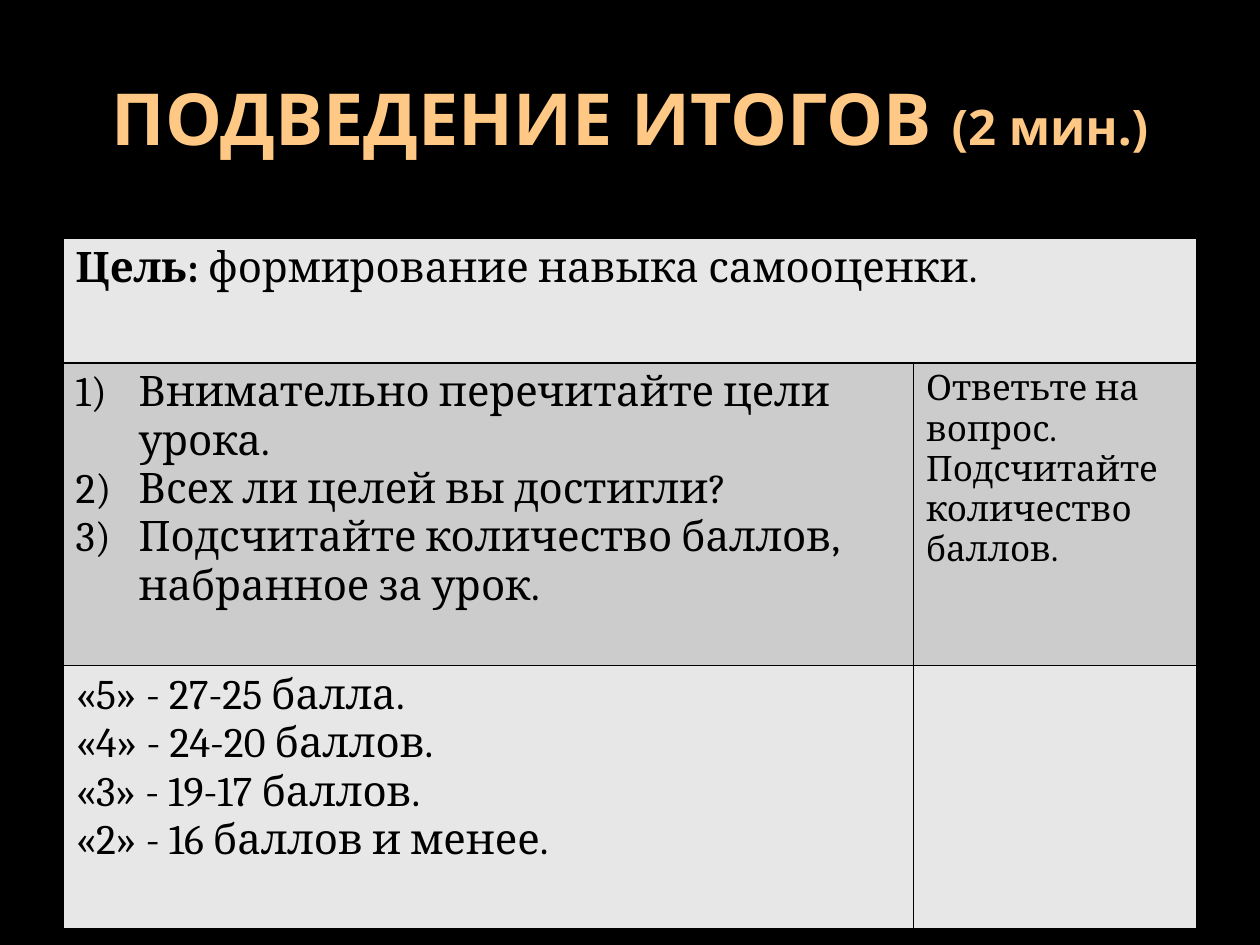
from lxml import etree
from pptx import Presentation, util as u
from pptx.dml.color import RGBColor
from pptx.enum import text
from pptx.oxml.ns import qn

# Content: a run is (words, size, bold)
TITLE = [("ПОДВЕДЕНИЕ ИТОГОВ ", 41, True), ("(2 мин.)", 28, True)]
GOAL = [[("Цель: ", 24, True), ("формирование навыка самооценки.", 24, False)]]
TASKS = [
    "Внимательно перечитайте цели урока.",
    "Всех ли целей вы достигли?",
    "Подсчитайте количество баллов, набранное за урок.",
]
HINT = ["Ответьте на вопрос. Подсчитайте количество баллов."]
MARKS = [
    "«5» - 27-25 балла.",
    "«4» - 24-20 баллов.",
    "«3» - 19-17 баллов.",
    "«2» - 16 баллов и менее.",
]
COLORS = {"back": "000000", "title": "FFC985", "ink": "000000",
          "light": "E7E7E7", "dark": "CCCCCC", "line": "000000"}

# Layout
WIDTH, HEIGHT = 10, 7.5
LEFT = WIDTH * 0.05
SPAN = WIDTH - 2 * LEFT
COLS = [SPAN * 0.75, SPAN * 0.25]
ROWS = [0.99, 2.4, 2.09]
TOP = 1.89


def rgb(name):
    return RGBColor.from_string(COLORS[name])


def plain(lines, size):
    return [[(line, size, False)] for line in lines]


def write(frame, paras, font, color):
    for i, runs in enumerate(paras):
        para = frame.paragraphs[0] if i == 0 else frame.add_paragraph()
        for words, size, bold in runs:
            run = para.add_run()
            run.text = words
            run.font.size = u.Pt(size)
            run.font.bold = bold
            run.font.name = font
            run.font.color.rgb = rgb(color)


def number(para):
    props = para._p.get_or_add_pPr()
    props.set("marL", str(u.Inches(0.5)))
    props.set("indent", str(-u.Inches(0.5)))
    etree.SubElement(props, qn("a:buFont"), typeface="+mj-lt")
    etree.SubElement(props, qn("a:buAutoNum"), type="arabicParenR")


def border(cell):
    props = cell._tc.get_or_add_tcPr()
    for side in ("lnL", "lnR", "lnT", "lnB"):
        line = etree.SubElement(props, qn("a:" + side), w=str(u.Pt(1)))
        fill = etree.SubElement(line, qn("a:solidFill"))
        etree.SubElement(fill, qn("a:srgbClr"), val=COLORS["line"])


# Slide
deck = Presentation()
deck.slide_width, deck.slide_height = u.Inches(WIDTH), u.Inches(HEIGHT)
slide = deck.slides.add_slide(deck.slide_layouts[6])
slide.background.fill.solid()
slide.background.fill.fore_color.rgb = rgb("back")

# Title
box = slide.shapes.add_textbox(*map(u.Inches, (LEFT, 0.3, SPAN, 1.25)))
frame = box.text_frame
frame.word_wrap = True
frame.vertical_anchor = text.MSO_ANCHOR.MIDDLE
write(frame, [TITLE], "Open Sans", "title")
frame.paragraphs[0].alignment = text.PP_ALIGN.CENTER

# Table grid
table = slide.shapes.add_table(
    len(ROWS), len(COLS), *map(u.Inches, (LEFT, TOP, SPAN, sum(ROWS)))).table
table.first_row = table.horz_banding = False
for col, size in zip(table.columns, COLS):
    col.width = u.Inches(size)
for r, (row, size) in enumerate(zip(table.rows, ROWS)):
    row.height = u.Inches(size)
    for cell in row.cells:
        border(cell)
        cell.fill.solid()
        cell.fill.fore_color.rgb = rgb("dark" if r % 2 else "light")
table.cell(0, 0).merge(table.cell(0, 1))

# Table text
CELLS = {(0, 0): GOAL, (1, 0): plain(TASKS, 24),
         (1, 1): plain(HINT, 20), (2, 0): plain(MARKS, 24)}
for spot, paras in CELLS.items():
    write(table.cell(*spot).text_frame, paras, "Cambria", "ink")
for para in table.cell(1, 0).text_frame.paragraphs:
    number(para)

deck.save("out.pptx")
